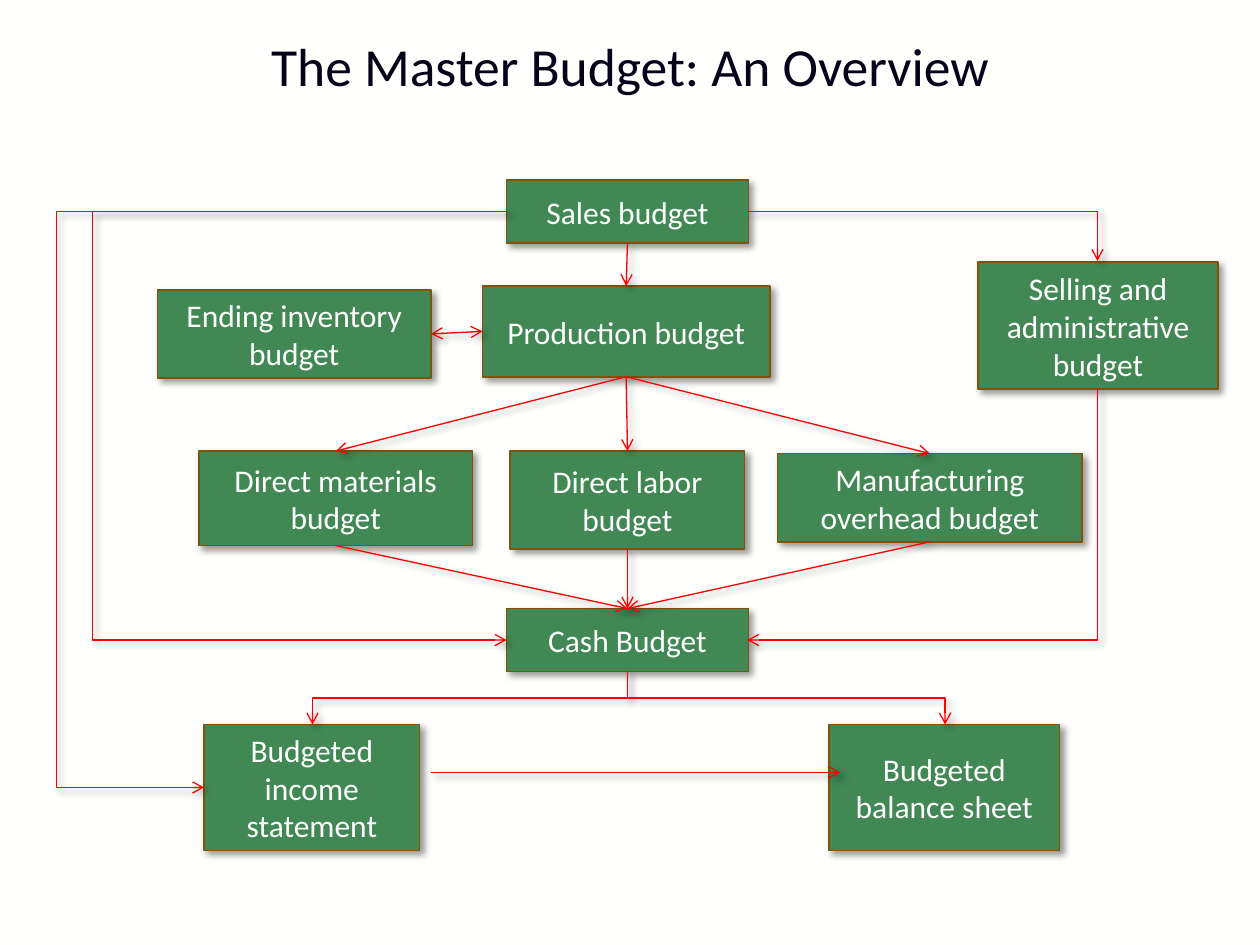
"""Build a slide that shows how the parts of a master budget connect."""
import pptx
import pptx.dml.color
import pptx.enum.shapes
import pptx.enum.text
import pptx.oxml
import pptx.oxml.ns
import pptx.util

Inches, Pt = pptx.util.Inches, pptx.util.Pt
Kind = pptx.enum.shapes.MSO_CONNECTOR
TOP, LEFT, BASE, RIGHT = range(4)
INK = {"back": "FFFFFE", "title": "050219", "box": "418855", "edge": "7D540A",
       "text": "FFFFFE", "line": "FF0000", "shade": "000000"}
FONT = "Calibri"

TITLE = ("The Master Budget: An Overview", (0.5, 0.3, 9, 0.43))
BOXES = {
    "make": ("Production budget", (3.83, 2.27, 2.28, 0.72)),
    "sell": ("Selling and\nadministrative\nbudget", (7.76, 2.08, 1.91, 1.01)),
    "goods": ("Direct materials\nbudget", (1.58, 3.58, 2.17, 0.75)),
    "plant": ("Manufacturing\noverhead budget", (6.17, 3.6, 2.42, 0.7)),
    "labor": ("Direct labor\vbudget", (4.05, 3.58, 1.86, 0.78)),
    "cash": ("Cash Budget", (4.02, 4.83, 1.92, 0.5)),
    "sales": ("Sales budget", (4.02, 1.43, 1.92, 0.5)),
    "stock": ("Ending inventory\nbudget", (1.25, 2.3, 2.17, 0.7)),
    "sheet": ("Budgeted\vbalance sheet", (6.58, 5.75, 1.83, 1)),
    "income": ("Budgeted\vincome\vstatement", (1.62, 5.75, 1.71, 1)),
}
ELBOWS = [
    ((5.93, 1.68, 2.78, 0.39), 0, None, "bentConnector2", None),
    ((6.32, 2.69, 2, 2.78), 90, None, "bentConnector2", None),
    ((4.02, 1.68, 0.01, 3.4), 180, "flipV", "bentConnector3", 335),
    ((1.62, 1.68, 2.39, 4.57), 180, "flipV", "bentConnector3", 1.49),
    ((3.52, 4.29, 0.42, 2.5), 90, None, "bentConnector3", 0.5),
    ((6.03, 4.28, 0.42, 2.52), 270, "flipH", "bentConnector3", 0.5),
]
LINKS = [
    ("stock", RIGHT, "make", LEFT),
    ("sales", BASE, "make", TOP),
    ("make", BASE, "labor", TOP),
    ("labor", BASE, "cash", TOP),
    ("make", BASE, "goods", TOP),
    ("make", BASE, "plant", TOP),
    ("goods", BASE, "cash", TOP),
    ("plant", BASE, "cash", TOP),
]
FLOW = (3.42, 6.13, 6.67, 6.13)


def tint(name):
    return pptx.dml.color.RGBColor.from_string(INK[name])


def shade(shape):
    space = pptx.oxml.ns.nsdecls("a")
    shape._element.spPr.append(pptx.oxml.parse_xml(
        f'<a:effectLst {space}><a:outerShdw blurRad="{Pt(4)}" dist="{Pt(3)}" '
        f'dir="2700000" algn="tl" rotWithShape="0"><a:srgbClr val="{INK["shade"]}">'
        '<a:alpha val="40000"/></a:srgbClr></a:outerShdw></a:effectLst>'))


def write(shape, text, size, ink):
    frame = shape.text_frame
    frame.text = text
    frame.vertical_anchor = pptx.enum.text.MSO_ANCHOR.MIDDLE
    for para in frame.paragraphs:
        para.alignment = pptx.enum.text.PP_ALIGN.CENTER
        for run in para.runs:
            run.font.name, run.font.size = FONT, Pt(size)
            run.font.color.rgb = tint(ink)
    return frame


def add_box(slide, text, place):
    box = slide.shapes.add_shape(pptx.enum.shapes.MSO_SHAPE.RECTANGLE, *map(Inches, place))
    box.fill.solid()
    box.fill.fore_color.rgb = tint("box")
    box.line.color.rgb = tint("edge")
    box.line.width = Pt(1)
    shade(box)
    write(box, text, 18, "text").word_wrap = False
    return box


def add_line(slide, kind, ends, heads=("tailEnd",)):
    line = slide.shapes.add_connector(kind, *map(Inches, ends))
    line.line.color.rgb = tint("line")
    line.line.width = Pt(0.75)
    for head in heads:
        tip = pptx.oxml.parse_xml(f'<a:{head} {pptx.oxml.ns.nsdecls("a")} type="arrow"/>')
        line.line._get_or_add_ln().append(tip)
    shade(line)
    return line


def add_elbow(slide, place, turn, flip, form, bend):
    x, y, wide, high = place
    prop = add_line(slide, Kind.ELBOW, (x, y, x + wide, y + high))._element.spPr
    if turn:
        prop.xfrm.set("rot", str(turn * 60000))
    if flip:
        prop.xfrm.set(flip, "1")
    shape = prop.find(pptx.oxml.ns.qn("a:prstGeom"))
    shape.set("prst", form)
    if bend:
        shape.find(pptx.oxml.ns.qn("a:avLst")).append(pptx.oxml.parse_xml(
            f'<a:gd {pptx.oxml.ns.nsdecls("a")} name="adj1" '
            f'fmla="val {round(bend * 100000)}"/>'))


def main():
    deck = pptx.Presentation()
    deck.slide_width, deck.slide_height = Inches(10), Inches(7.5)
    slide = deck.slides.add_slide(deck.slide_layouts[6])
    slide.background.fill.solid()
    slide.background.fill.fore_color.rgb = tint("back")

    text, place = TITLE
    write(slide.shapes.add_textbox(*map(Inches, place)), text, 30.6, "title").word_wrap = True
    boxes = {name: add_box(slide, *item) for name, item in BOXES.items()}
    for elbow in ELBOWS:
        add_elbow(slide, *elbow)
    add_line(slide, Kind.STRAIGHT, FLOW)
    for start, out, end, into in LINKS:
        heads = ("headEnd", "tailEnd") if start == "stock" else ("tailEnd",)
        line = add_line(slide, Kind.STRAIGHT, (0, 0, 0, 0), heads)
        line.begin_connect(boxes[start], out)
        line.end_connect(boxes[end], into)
    deck.save("out.pptx")


if __name__ == "__main__":
    main()
